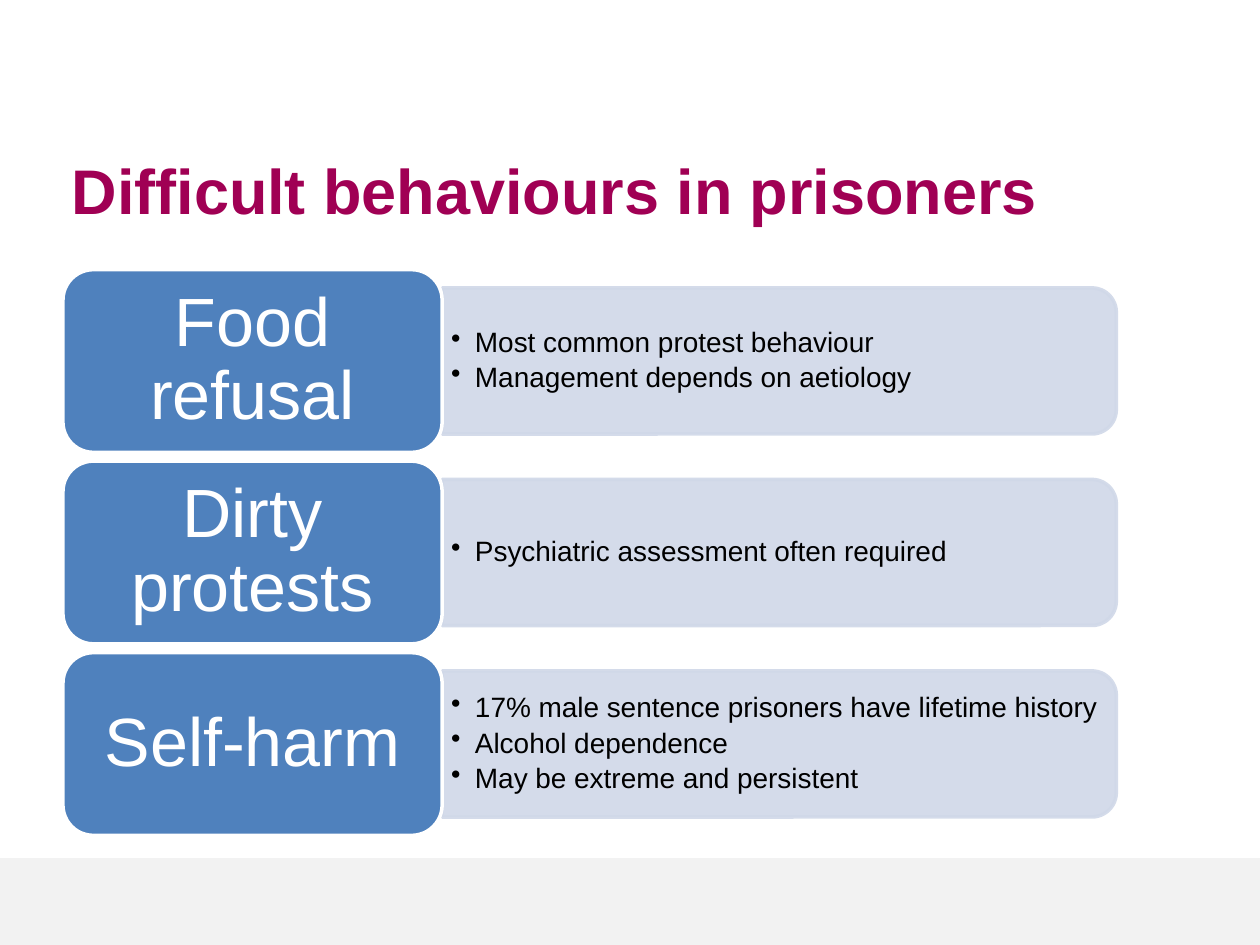
from lxml import etree
from pptx import Presentation
from pptx.dml.color import RGBColor
from pptx.enum.shapes import MSO_SHAPE as Shape
from pptx.enum.text import MSO_ANCHOR as Anchor, PP_ALIGN as Align
from pptx.oxml.ns import qn
from pptx.util import Inches, Pt

COLORS = {
    "title": "A00054",
    "head": "4F81BD",
    "panel": "D0D8E8",
    "footer": "F2F2F2",
    "white": "FFFFFF",
    "black": "000000",
}
FONT = "Arial"
WIDTH, HEIGHT = 10, 7.5
MARGIN = 0.05 * WIDTH
ROW_HEIGHT, ROW_PITCH = 1.45, 1.52
ROWS = [
    ("Food refusal", ["Most common protest behaviour", "Management depends on aetiology"]),
    ("Dirty protests", ["Psychiatric assessment often required"]),
    ("Self-harm", [
        "17% male sentence prisoners have lifetime history",
        "Alcohol dependence",
        "May be extreme and persistent",
    ]),
]


def color(name):
    return RGBColor.from_string(COLORS[name])


def add_box(slide, kind, box, fill, line=None):
    shape = slide.shapes.add_shape(kind, *map(Inches, box))
    shape.shadow.inherit = False
    shape.fill.solid()
    shape.fill.fore_color.rgb = color(fill)
    if line:
        shape.line.color.rgb = color(line)
        shape.line.width = Pt(2)
    else:
        shape.line.fill.background()
    return shape


def set_frame(frame, anchor, margins):
    frame.word_wrap = True
    frame.vertical_anchor = anchor
    frame.margin_left, frame.margin_top, frame.margin_right, frame.margin_bottom = map(Inches, margins)


def set_font(paragraph, size, name, bold=False):
    font = paragraph.font
    font.name, font.size, font.bold = FONT, Pt(size), bold
    font.color.rgb = color(name)


def add_bullet(paragraph, indent):
    properties = paragraph._p.get_or_add_pPr()
    properties.set("marL", str(Inches(indent)))
    properties.set("indent", str(-Inches(indent)))
    etree.SubElement(properties, qn("a:buChar")).set("char", "•")


def draw_title(slide, box, text):
    frame = slide.shapes.add_textbox(*map(Inches, box)).text_frame
    set_frame(frame, Anchor.BOTTOM, (0.07, 0.05, 0.07, 0.06))
    paragraph = frame.paragraphs[0]
    paragraph.text = text
    set_font(paragraph, 36, "title", bold=True)


def draw_panel(slide, box, points):
    left, top, width, height = box
    turned = (left + (width - height) / 2, top + (height - width) / 2, height, width)
    panel = add_box(slide, Shape.ROUND_2_SAME_RECTANGLE, turned, "panel", "panel")
    panel.rotation = 90
    for solid in panel._element.spPr.iter(qn("a:srgbClr")):
        etree.SubElement(solid, qn("a:alpha")).set("val", "90000")

    inset = 0.05 * height
    text_box = (left, top + inset, width - inset, height - 2 * inset)
    frame = slide.shapes.add_textbox(*map(Inches, text_box)).text_frame
    set_frame(frame, Anchor.MIDDLE, (0.07, 0.03, 0.07, 0.03))
    for index, point in enumerate(points):
        paragraph = frame.add_paragraph() if index else frame.paragraphs[0]
        paragraph.text = point
        paragraph.line_spacing = 0.9
        paragraph.space_after = Pt(2.8)
        add_bullet(paragraph, 0.19)
        set_font(paragraph, 16, "black")


def draw_head(slide, box, text):
    frame = add_box(slide, Shape.ROUNDED_RECTANGLE, box, "head", "white").text_frame
    set_frame(frame, Anchor.MIDDLE, (0.16, 0.08, 0.16, 0.08))
    paragraph = frame.paragraphs[0]
    paragraph.text = text
    paragraph.alignment = Align.CENTER
    paragraph.line_spacing = 0.9
    set_font(paragraph, 39, "white")


def draw_row(slide, box, heading, points):
    left, top, width, height = box
    head_width = 0.36 * width
    panel_box = (left + head_width, top + 0.1 * height, width - head_width, 0.8 * height)
    draw_panel(slide, panel_box, points)
    draw_head(slide, (left, top, head_width, height), heading)


def main():
    presentation = Presentation()
    presentation.slide_width, presentation.slide_height = Inches(WIDTH), Inches(HEIGHT)
    slide = presentation.slides.add_slide(presentation.slide_layouts[6])
    footer_height = 0.69
    add_box(slide, Shape.RECTANGLE, (0, HEIGHT - footer_height, WIDTH, footer_height), "footer")
    draw_title(slide, (MARGIN, 1.12, 0.85 * WIDTH, 0.74), "Difficult behaviours in prisoners")
    for index, (heading, points) in enumerate(ROWS):
        row_box = (MARGIN, 2.14 + index * ROW_PITCH, 8.36, ROW_HEIGHT)
        draw_row(slide, row_box, heading, points)
    presentation.save("out.pptx")


if __name__ == "__main__":
    main()
